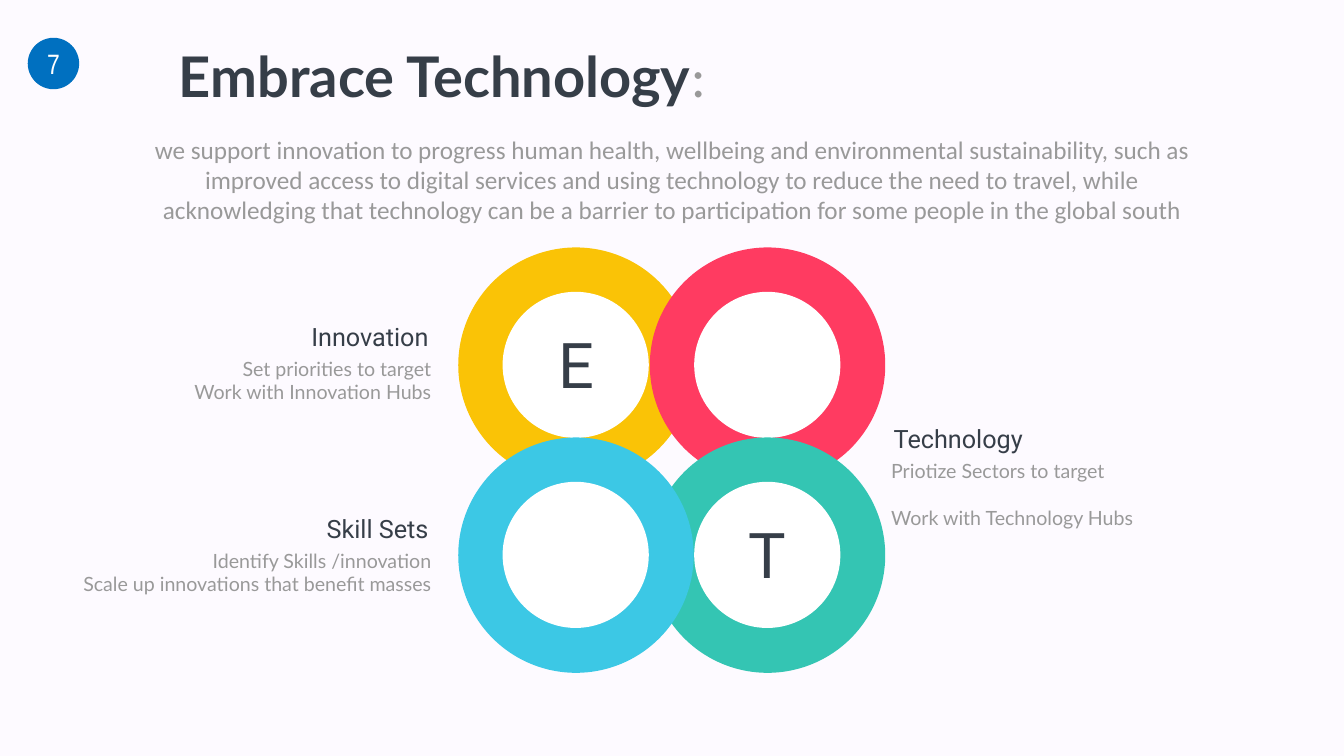
from pptx import Presentation
from pptx.dml.color import RGBColor
from pptx.enum.shapes import MSO_SHAPE as Shape
from pptx.enum.text import MSO_ANCHOR as Anchor, PP_ALIGN as Align
from pptx.util import Emu, Pt

PX = 9144  # EMU per px, 100 px to the inch
COLORS = {
    "back": "FDFAFF", "dark": "363E48", "grey": "999999", "white": "FFFFFF",
    "yellow": "FAC306", "red": "FF3B61", "green": "34C5B3", "cyan": "3CC8E5",
    "blue": "0070C0",
}
RING, HOLE, LETTER_W, LETTER_H = 467, 290, 167, 162
LEFT, RIGHT, TOP, BOTTOM = 909, 1289, 491, 868


def px(*lengths):
    return [Emu(n * PX) for n in lengths]


def rgb(name):
    return RGBColor.from_string(COLORS[name])


class Deck:
    def __init__(self, width, height):
        self.prs = Presentation()
        self.prs.slide_width, self.prs.slide_height = px(width, height)

    def slide(self, color):
        self.s = self.prs.slides.add_slide(self.prs.slide_layouts[6])
        fill = self.s.background.fill
        fill.solid()
        fill.fore_color.rgb = rgb(color)

    def style(self, p, size, font, color, align):
        p.alignment = align
        p.font.size, p.font.name = Pt(size), font
        p.font.color.rgb = rgb(color)

    def circle(self, x, y, size, color):
        sp = self.s.shapes.add_shape(Shape.OVAL, *px(x, y, size, size))
        sp.shadow.inherit = False
        sp.fill.solid()
        sp.fill.fore_color.rgb = rgb(color)
        sp.line.fill.background()
        return sp

    def badge(self, x, y, size, number):
        tf = self.circle(x, y, size, "blue").text_frame
        tf.word_wrap = False
        tf.vertical_anchor = Anchor.MIDDLE
        p = tf.paragraphs[0]
        p.text = number
        self.style(p, 40, "Arial Narrow", "white", Align.CENTER)

    def text(self, x, y, w, h, lines, size, font, color, align=Align.LEFT, gap=0):
        """Write one paragraph per line, with gap points between them."""
        tf = self.s.shapes.add_textbox(*px(x, y, w, h)).text_frame
        tf.word_wrap = True
        for i, line in enumerate(lines):
            p = tf.add_paragraph() if i else tf.paragraphs[0]
            p.text = line
            p.space_before = Pt(gap if i else 0)
            self.style(p, size, font, color, align)
        return tf

    def title(self, x, y, w, h, words, mark):
        p = self.text(x, y, w, h, [words], 80, "Lato", "dark").paragraphs[0]
        p.runs[0].font.bold = True
        r = p.add_run()
        r.text = mark
        r.font.name = "Calibri"
        r.font.color.rgb = rgb("grey")

    def ring(self, x, y, color, letter):
        self.circle(x, y, RING, color)
        inset = (RING - HOLE) // 2
        self.circle(x + inset, y + inset, HOLE, "white")
        if letter:
            self.text(x + (RING - LETTER_W) // 2, y + (RING - LETTER_H) // 2 - 3,
                      LETTER_W, LETTER_H, [letter], 90, "Roboto", "dark", Align.CENTER)

    def topic(self, y, head, lines, on_left=True, gap=0):
        """Heading with lines below it, beside the rings."""
        head_x, body_x = (503, 155) if on_left else (1763, 1758)
        align = Align.RIGHT if on_left else Align.LEFT
        self.text(body_x, y + 71, 710, 104, lines, 28, "Lato", "grey", align, gap)
        self.text(head_x, y, 357, 71, [head], 36, "Roboto", "dark", align)


def main():
    deck = Deck(2666, 1500)
    deck.slide("back")

    for x, y, color, letter in [
        (LEFT, TOP, "yellow", "E"),
        (RIGHT, TOP, "red", ""),
        (RIGHT, BOTTOM, "green", "T"),
        (LEFT, BOTTOM, "cyan", ""),
    ]:
        deck.ring(x, y, color, letter)

    deck.topic(835, "Technology",
               ["Priotize Sectors to target", "Work with Technology Hubs"],
               on_left=False, gap=33.6)
    deck.topic(632, "Innovation",
               ["Set priorities to target", "Work with Innovation Hubs"])
    deck.topic(1013, "Skill Sets",
               ["Identify Skills /innovation", "Scale up innovations that benefit masses"])

    deck.title(345, 77, 1202, 145, "Embrace Technology", ":")
    deck.text(292, 261, 2082, 192, [
        "we support innovation to progress human health, wellbeing and environmental "
        "sustainability, such as improved access to digital services and using technology "
        "to reduce the need to travel, while acknowledging that technology can be a barrier "
        "to participation for some people in the global south"
    ], 36, "Calibri", "grey", Align.CENTER)
    deck.badge(55, 75, 102, "7")

    deck.prs.save("out.pptx")


if __name__ == "__main__":
    main()
